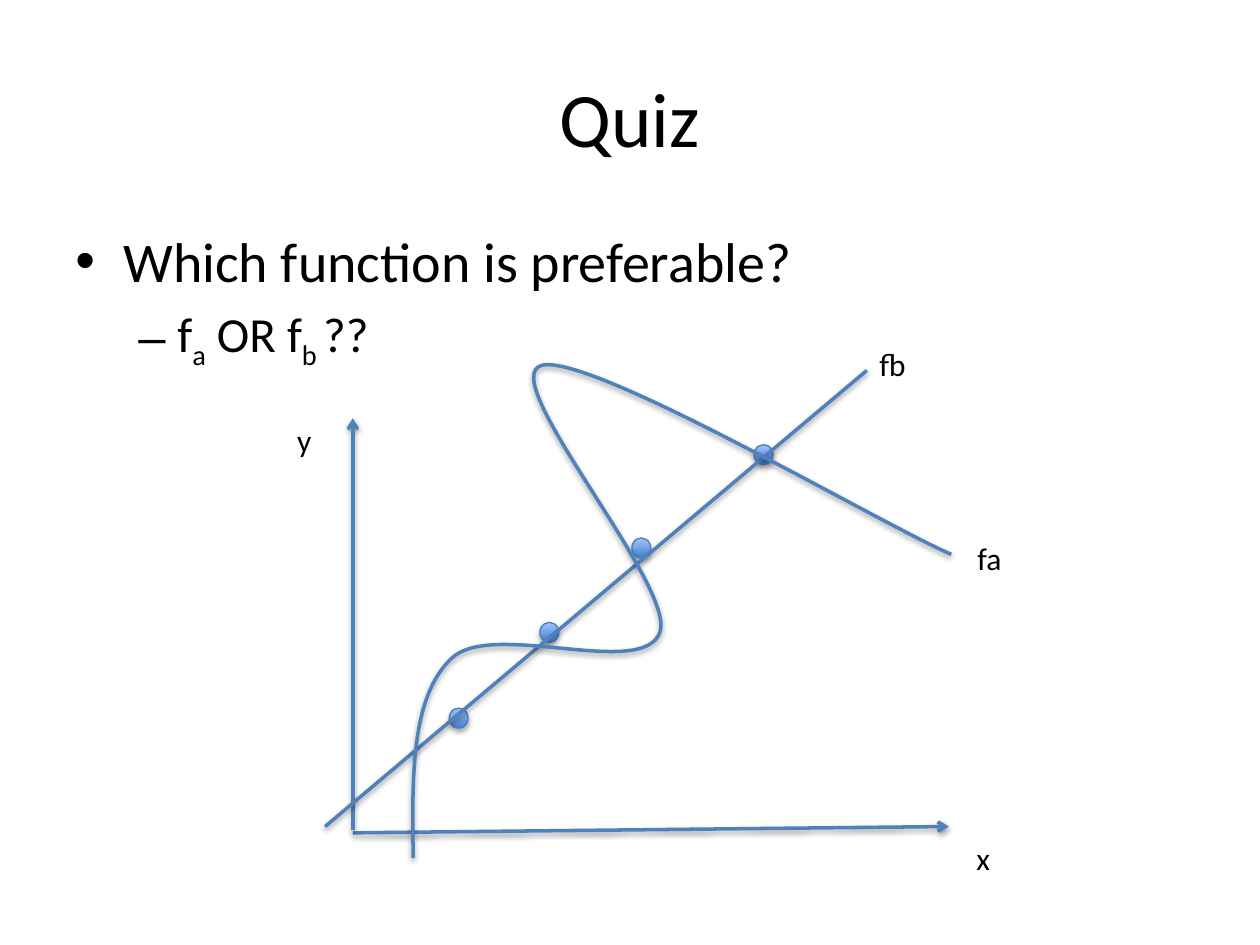
from lxml import etree
from pptx import Presentation
from pptx.dml.color import RGBColor
from pptx.enum.shapes import MSO_CONNECTOR, MSO_SHAPE
from pptx.enum.text import MSO_ANCHOR, PP_ALIGN
from pptx.oxml import parse_xml
from pptx.oxml.ns import qn
from pptx.util import Inches, Pt

STRAIGHT, OVAL = MSO_CONNECTOR.STRAIGHT, MSO_SHAPE.OVAL
MIDDLE, CENTER, LEFT = MSO_ANCHOR.MIDDLE, PP_ALIGN.CENTER, PP_ALIGN.LEFT
BLACK = RGBColor(0x00, 0x00, 0x00)
BLUE = RGBColor(0x4F, 0x81, 0xBD)
DOT_LINE = RGBColor(0x4B, 0x7E, 0xBC)
DOT_DARK = RGBColor(0x3F, 0x80, 0xCE)
DOT_LIGHT = RGBColor(0xA4, 0xC4, 0xFF)
FONT = "Calibri"
NS = "http://schemas.openxmlformats.org/drawingml/2006/main"
W, H = Inches(10), Inches(7.5)
U = W / 10  # one grid column, also the height of a row


def add_run(p, text, size, baseline=0):
    r = p.add_run()
    r.text = text
    r.font.size, r.font.name = Pt(size), FONT
    r.font.color.rgb = BLACK
    if baseline:
        r._r.get_or_add_rPr().set("baseline", str(baseline * 1000))


def add_text_box(s, x, y, w, h, wrap=True):
    box = s.shapes.add_textbox(*(round(v * U) for v in (x, y, w, h)))
    tf = box.text_frame
    tf.word_wrap = wrap
    return tf


def set_bullet(p, char, margin, indent):
    pPr = p._p.get_or_add_pPr()
    pPr.set("marL", str(Inches(margin)))
    pPr.set("indent", str(Inches(-indent)))
    etree.SubElement(pPr, qn("a:buFont")).set("typeface", "Arial")
    etree.SubElement(pPr, qn("a:buChar")).set("char", char)


def add_shadow(shape, blur, dist, alpha):
    shape._element.spPr.append(parse_xml(
        f'<a:effectLst xmlns:a="{NS}"><a:outerShdw blurRad="{Pt(blur)}" '
        f'dist="{Pt(dist)}" dir="5400000" rotWithShape="0">'
        f'<a:srgbClr val="{BLACK}"><a:alpha val="{alpha * 1000}"/></a:srgbClr>'
        '</a:outerShdw></a:effectLst>'))


def style_stroke(shape, arrow=False):
    shape.line.color.rgb, shape.line.width = BLUE, Pt(2)
    if arrow:
        ln = shape.line._get_or_add_ln()
        etree.SubElement(ln, qn("a:tailEnd")).set("type", "arrow")
    add_shadow(shape, 3.1, 1.6, 38)


def add_title(s, x, y, w, h):
    tf = add_text_box(s, x, y, w, h)
    tf.vertical_anchor = MIDDLE
    p = tf.paragraphs[0]
    p.alignment = CENTER
    add_run(p, "Quiz", 44)


def add_question(s, x, y, w, h):
    tf = add_text_box(s, x, y, w, h)
    items = [
        (32, "•", 0.38, 0.38, [("Which function is preferable?", 0)]),
        (28, "–", 0.81, 0.31, [("f", 0), ("a", -25), (" OR f", 0),
                               ("b ", -25), ("??", 0)]),
    ]
    for i, (size, char, margin, indent, runs) in enumerate(items):
        p = tf.add_paragraph() if i else tf.paragraphs[0]
        p.alignment = LEFT
        p.space_before = Pt(size * 0.2)
        set_bullet(p, char, margin, indent)
        for text, baseline in runs:
            add_run(p, text, size, baseline)


def add_curve(s, points):
    """Draw a Bezier curve: a start point, then three points per segment."""
    builder = s.shapes.build_freeform(*points[0], scale=1.0)
    builder.add_line_segments(points[1:], close=False)
    curve = builder.convert_to_shape()
    route = next(curve._element.iter(qn("a:path")))
    lines = route.findall(qn("a:lnTo"))
    for i in range(0, len(lines), 3):
        bezier = etree.SubElement(route, qn("a:cubicBezTo"))
        for line in lines[i:i + 3]:
            bezier.append(line[0])
            route.remove(line)
    curve.fill.background()
    style_stroke(curve)


def add_plot(s, left, base):
    """Draw the plot; its points run right and up from the axes' origin."""
    def at(x, y):
        return round((left + x) * U), round((base - y) * U)

    def add_line(start, end, arrow=False):
        line = s.shapes.add_connector(STRAIGHT, *at(*start), *at(*end))
        style_stroke(line, arrow)

    # Axes
    add_line((0, -0.01), (4.73, 0.04), arrow=True)
    add_line((0, 0.01), (0, 3.28), arrow=True)

    # Data points
    dot_w, dot_h = 0.15, 0.16
    for x, y in [(0.84, 0.9), (1.56, 1.58), (2.29, 2.25), (3.26, 2.99)]:
        dot = s.shapes.add_shape(OVAL, *at(x - dot_w / 2, y + dot_h / 2),
                                 round(dot_w * U), round(dot_h * U))
        dot.fill.gradient()
        dot.fill.gradient_angle = 90
        for stop, color in zip(dot.fill.gradient_stops, (DOT_DARK, DOT_LIGHT)):
            stop.color.rgb = color
        dot.line.color.rgb, dot.line.width = DOT_LINE, Pt(0.75)
        add_shadow(dot, 3.1, 1.8, 35)

    # Functions fb (straight) and fa (curved)
    add_line((-0.22, 0.04), (4.08, 3.66))
    add_curve(s, [at(x, y) for x, y in [
        (0.48, -0.21),
        (0.47, 0.43), (0.46, 1.08), (0.79, 1.38),
        (1.12, 1.68), (2.32, 1.2), (2.44, 1.59),
        (2.55, 1.97), (1.12, 3.6), (1.5, 3.7),
        (1.89, 3.8), (4.19, 2.44), (4.75, 2.2)]])

    # Labels
    for text, x, y, w in [("x", 4.85, -0.01, 0.31), ("y", -0.54, 3.31, 0.31),
                          ("fa", 4.86, 2.37, 0.4), ("fb", 4.08, 3.91, 0.41)]:
        tf = add_text_box(s, left + x, base - y, w, 0.4, wrap=False)
        add_run(tf.paragraphs[0], text, 18)


def main():
    prs = Presentation()
    prs.slide_width, prs.slide_height = W, H
    s = prs.slides.add_slide(prs.slide_layouts[6])
    add_title(s, 0.5, 0.3, 9, 1.25)
    add_question(s, 0.5, 1.75, 9, 1.32)
    add_plot(s, 2.8, 6.6)
    prs.save("out.pptx")


if __name__ == "__main__":
    main()
